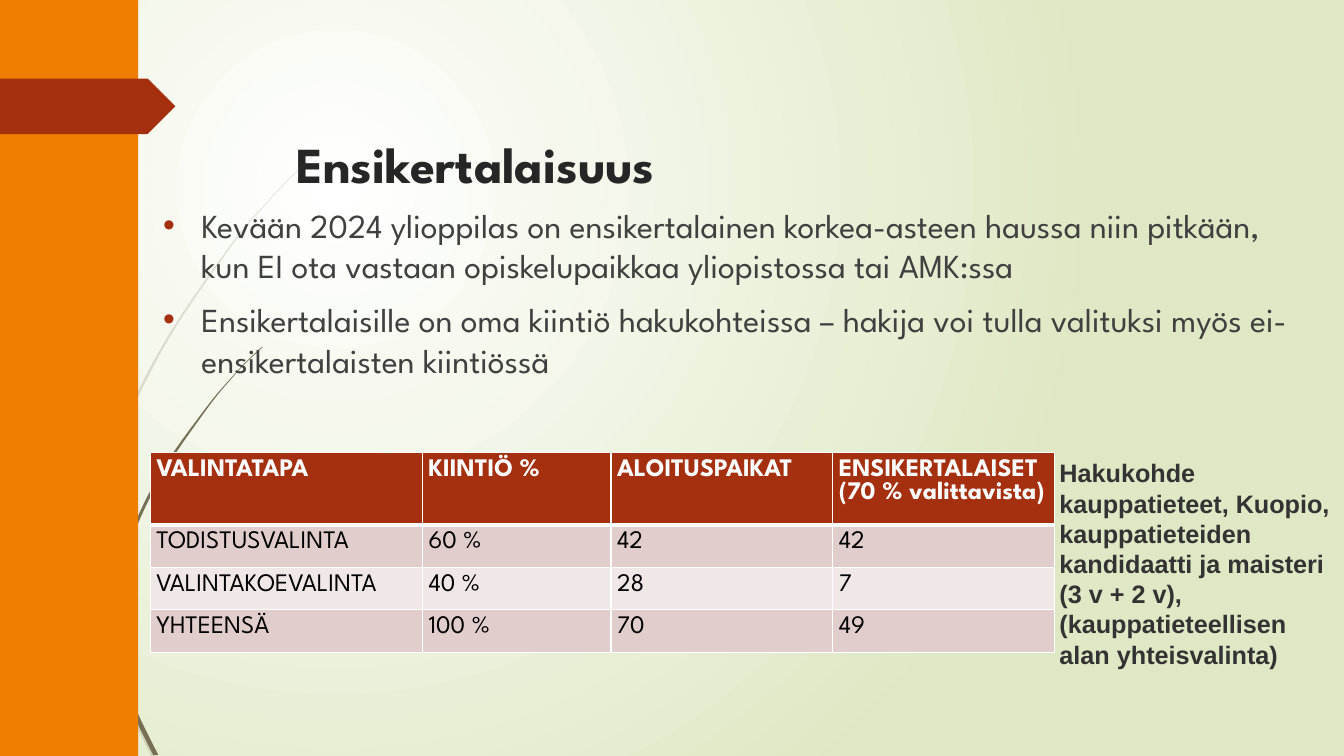
from pptx import Presentation
from pptx.dml.color import RGBColor
from pptx.enum.shapes import MSO_SHAPE as Shape
from pptx.enum.text import MSO_ANCHOR as Anchor
from pptx.oxml import parse_xml
from pptx.oxml.ns import nsdecls, qn
from pptx.util import Inches, Pt

# Content
TITLE = "Ensikertalaisuus"
POINTS = [
    "Kevään 2024 ylioppilas on ensikertalainen korkea-asteen haussa niin pitkään, "
    "kun EI ota vastaan opiskelupaikkaa yliopistossa tai AMK:ssa",
    "Ensikertalaisille on oma kiintiö hakukohteissa – hakija voi tulla valituksi "
    "myös ei-ensikertalaisten kiintiössä",
]
ROWS = [
    ("VALINTATAPA", "KIINTIÖ %", "ALOITUSPAIKAT", "ENSIKERTALAISET (70 % valittavista)"),
    ("TODISTUSVALINTA", "60 %", "42", "42"),
    ("VALINTAKOEVALINTA", "40 %", "28", "7"),
    ("YHTEENSÄ", "100 %", "70", "49"),
]
SIDE = ("Hakukohde kauppatieteet, Kuopio, kauppatieteiden kandidaatti ja maisteri "
        "(3 v + 2 v), (kauppatieteellisen alan yhteisvalinta)")

# Style
FONT, RED, ORANGE, OLIVE = "League Spartan", "A53010", "EF7D00", "766F54"
BANDS = ("F0E8E7", "E1CDCC")
WIDTHS = (2.7, 1.87, 2.2, 2.2)
HEIGHTS = (0.58, 0.36, 0.36, 0.36)

# Stems: outer edge, inner edge, opacity in percent
STEMS = [
    ([(0.88, 5.96), (0.88, 5.84), (1.1, 4.62), (1.6, 3.49), (2.29, 2.45),
      (2.68, 1.98), (2.9, 1.75), (3.12, 1.54)],
     [(3.12, 1.53), (2.89, 1.75), (2.68, 1.97), (2.28, 2.44), (1.58, 3.48),
      (1.07, 4.61), (0.85, 5.84)], 20),
    ([(0.88, 5.96), (0.92, 6.07), (1.27, 6.92), (1.55, 7.5)],
     [(1.5, 7.5), (1.23, 6.94), (0.88, 6.1)], 20),
    ([(1.1, 6.41), (1.11, 6.33), (1.25, 5.52), (1.58, 4.76), (2.05, 4.06),
      (2.31, 3.74), (2.45, 3.59), (2.61, 3.44)],
     [(2.6, 3.44), (2.45, 3.58), (2.31, 3.73), (2.04, 4.05), (1.56, 4.74),
      (1.22, 5.51), (1.06, 6.31)], 100),
    ([(1.1, 6.41), (1.13, 6.49), (1.36, 7.06), (1.57, 7.49)],
     [(1.52, 7.49), (1.32, 7.08), (1.11, 6.56)], 100),
]


def color(code):
    return RGBColor.from_string(code)


def paint(shape, code):
    shape.shadow.inherit = False
    shape.fill.solid()
    shape.fill.fore_color.rgb = color(code)
    shape.line.fill.background()


def write(para, text, size, code, font=FONT, bold=False):
    run = para.add_run()
    run.text = text
    run.font.size, run.font.name, run.font.bold = Pt(size), font, bold
    run.font.color.rgb = color(code)


def smooth(pts, steps=6):
    """Sample a Catmull-Rom curve through the points."""
    ends = [pts[0], *pts, pts[-1]]
    out = [pts[0]]
    for a, b, c, d in zip(ends, ends[1:], ends[2:], ends[3:]):
        for i in range(1, steps + 1):
            t = i / steps
            out.append(tuple(
                (2 * q + (r - p) * t + (2 * p - 5 * q + 4 * r - s) * t ** 2
                 + (3 * q - p - 3 * r + s) * t ** 3) / 2
                for p, q, r, s in zip(a, b, c, d)))
    return out


def border(cell, low):
    props = cell._tc.get_or_add_tcPr()
    for n, (side, width) in enumerate(zip("LRTB", (1, 1, 1, low))):
        props.insert(n, parse_xml(
            f'<a:ln{side} {nsdecls("a")} w="{Pt(width)}"><a:solidFill>'
            f'<a:srgbClr val="FFFFFF"/></a:solidFill></a:ln{side}>'))


def main():
    deck = Presentation()
    deck.slide_width, deck.slide_height = Inches(13.33), Inches(7.5)
    slide = deck.slides.add_slide(deck.slide_layouts[5])
    shapes = slide.shapes

    # Radial background
    back = slide.background.fill
    back.gradient()
    for stop, code in zip(back.gradient_stops, ("FFFFFF", "DFE8C4")):
        stop.color.rgb = color(code)
    lin = slide.element.find(".//" + qn("a:lin"))
    lin.getparent().replace(lin, parse_xml(
        f'<a:path {nsdecls("a")} path="circle"><a:fillToRect l="50000" t="50000" '
        'r="100000" b="100000"/></a:path>'))

    # Curved stems
    for outer, inner, alpha in STEMS:
        pts = [(Inches(x), Inches(y)) for x, y in smooth(outer) + smooth(inner)]
        pen = shapes.build_freeform(*pts[0])
        pen.add_line_segments(pts[1:], close=True)
        stem = pen.convert_to_shape()
        paint(stem, OLIVE)
        if alpha < 100:
            tint = stem.fill._xPr.find(".//" + qn("a:srgbClr"))
            tint.append(parse_xml(f'<a:alpha {nsdecls("a")} val="{alpha * 1000}"/>'))

    # Side bar and arrow tab
    for kind, top, width, height, code in (
            (Shape.RECTANGLE, 0, 1.37, 7.5, ORANGE),
            (Shape.PENTAGON, 0.78, 1.74, 0.55, RED)):
        paint(shapes.add_shape(kind, 0, Inches(top), Inches(width), Inches(height)), code)

    # Title
    title = shapes.title
    title.left, title.top = Inches(2.84), Inches(1.17)
    title.width, title.height = Inches(9.75), Inches(0.91)
    frame = title.text_frame
    frame.vertical_anchor = Anchor.MIDDLE
    para = frame.paragraphs[0]
    para.alignment = 1
    write(para, TITLE, 36, "262626", bold=True)

    # Bullet points
    box = shapes.add_textbox(Inches(1.52), Inches(1.98), Inches(11.5), Inches(3.54))
    frame = box.text_frame
    frame.word_wrap = True
    for n, text in enumerate(POINTS):
        para = frame.add_paragraph() if n else frame.paragraphs[0]
        props = para._p.get_or_add_pPr()
        props.set("marL", str(Inches(0.38)))
        props.set("indent", str(-Inches(0.38)))
        for xml in (f'<a:buClr {nsdecls("a")}><a:srgbClr val="{RED}"/></a:buClr>',
                    f'<a:buFont {nsdecls("a")} typeface="Arial"/>',
                    f'<a:buChar {nsdecls("a")} char="•"/>'):
            props.append(parse_xml(xml))
        if n:
            para.space_before = Pt(10)
        write(para, text, 24, "404040")

    # Quota table
    table = shapes.add_table(
        len(ROWS), len(WIDTHS), Inches(1.49), Inches(4.49),
        Inches(sum(WIDTHS)), Inches(sum(HEIGHTS))).table
    for col, width in zip(table.columns, WIDTHS):
        col.width = Inches(width)
    for r, (row, height) in enumerate(zip(ROWS, HEIGHTS)):
        table.rows[r].height = Inches(height)
        head = r == 0
        for c, text in enumerate(row):
            cell = table.cell(r, c)
            cell.margin_left = cell.margin_right = Inches(0.06)
            cell.margin_top = cell.margin_bottom = Inches(0.06)
            cell.fill.solid()
            cell.fill.fore_color.rgb = color(RED if head else BANDS[r % 2])
            border(cell, 3 if head else 1)
            write(cell.text_frame.paragraphs[0], text, 18,
                  "FFFFFF" if head else "000000", bold=head)

    # Side note
    note = shapes.add_textbox(Inches(10.41), Inches(4.49), Inches(3), Inches(2.52))
    note.text_frame.word_wrap = True
    write(note.text_frame.paragraphs[0], SIDE, 18, "333333", "Arial", True)

    deck.save("out.pptx")


if __name__ == "__main__":
    main()
